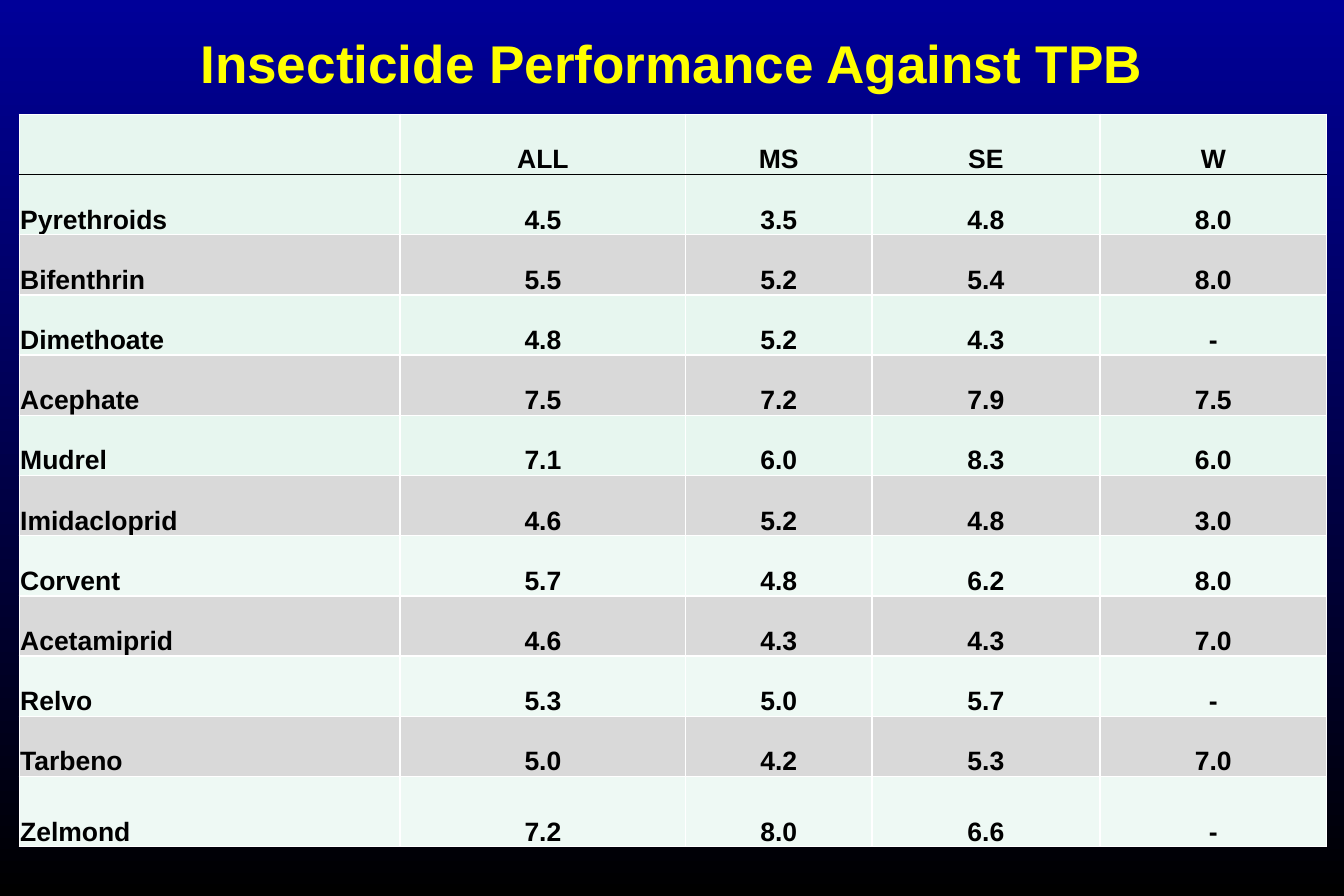
"""Build a slide with a table of insecticide performance ratings."""
from lxml.etree import SubElement
from pptx import Presentation
from pptx.dml.color import RGBColor
from pptx.enum.text import MSO_ANCHOR as Anchor, MSO_AUTO_SIZE as AutoSize, PP_ALIGN as Align
from pptx.oxml.ns import qn
from pptx.util import Cm, Pt

COLOURS = {
    "sky": "000099",
    "black": "000000",
    "title": "FFFF00",
    "grid": "FFFFFF",
    "grey": "D9D9D9",
    "mint": "E7F6EF",
    "pale": "EEF9F4",
}
FONT = "Arial"
COLUMN_WIDTHS = [8.1, 6.07, 3.96, 4.85, 4.82]
ROW_HEIGHT, LAST_ROW_HEIGHT = 1.28, 1.49
FIRST_PALE_ROW = 7
RATINGS = [
    ["", "ALL", "MS", "SE", "W"],
    ["Pyrethroids", "4.5", "3.5", "4.8", "8.0"],
    ["Bifenthrin", "5.5", "5.2", "5.4", "8.0"],
    ["Dimethoate", "4.8", "5.2", "4.3", "-"],
    ["Acephate", "7.5", "7.2", "7.9", "7.5"],
    ["Mudrel", "7.1", "6.0", "8.3", "6.0"],
    ["Imidacloprid", "4.6", "5.2", "4.8", "3.0"],
    ["Corvent", "5.7", "4.8", "6.2", "8.0"],
    ["Acetamiprid", "4.6", "4.3", "4.3", "7.0"],
    ["Relvo", "5.3", "5.0", "5.7", "-"],
    ["Tarbeno", "5.0", "4.2", "5.3", "7.0"],
    ["Zelmond", "7.2", "8.0", "6.6", "-"],
]


def colour(name):
    return RGBColor.from_string(COLOURS[name])


def add_text(frame, text, size, colour_name, align):
    para = frame.paragraphs[0]
    para.alignment = align
    if text:
        span = para.add_run()
        span.text = text
        span.font.name = FONT
        span.font.size = Pt(size)
        span.font.bold = True
        span.font.color.rgb = colour(colour_name)


def paint_background(page):
    fill = page.background.fill
    fill.gradient()
    fill.gradient_angle = 270
    for stop, name in zip(fill.gradient_stops, ["sky", "black"]):
        stop.color.rgb = colour(name)


def add_title(page, text):
    box = page.shapes.title
    box.left, box.top, box.width, box.height = Cm(0), Cm(0.51), Cm(28.58), Cm(1.63)
    frame = box.text_frame
    frame.word_wrap = True
    frame.auto_size = AutoSize.SHAPE_TO_FIT_TEXT
    frame.vertical_anchor = Anchor.TOP
    add_text(frame, text, 32, "title", Align.CENTER)


def set_borders(cell, top, bottom):
    properties = cell._tc.get_or_add_tcPr()
    sides = {"a:lnL": "grid", "a:lnR": "grid", "a:lnT": top, "a:lnB": bottom}
    for tag, name in sides.items():
        line = SubElement(properties, qn(tag), w=str(Pt(1)))
        fill = SubElement(line, qn("a:solidFill"))
        SubElement(fill, qn("a:srgbClr"), val=COLOURS[name])


def row_colour(row):
    if row and row % 2 == 0:
        return "grey"
    return "pale" if row >= FIRST_PALE_ROW else "mint"


def fill_cell(cell, row, column):
    cell.margin_left = cell.margin_right = cell.margin_top = Cm(0.02)
    cell.margin_bottom = Cm(0)
    cell.vertical_anchor = Anchor.BOTTOM
    set_borders(cell, "black" if row == 1 else "grid", "black" if row == 0 else "grid")
    cell.fill.solid()
    cell.fill.fore_color.rgb = colour(row_colour(row))
    align = Align.CENTER if column else Align.LEFT
    add_text(cell.text_frame, RATINGS[row][column], 16, "black", align)


def add_ratings_table(page):
    heights = [ROW_HEIGHT] * (len(RATINGS) - 1) + [LAST_ROW_HEIGHT]
    table = page.shapes.add_table(
        len(RATINGS), len(COLUMN_WIDTHS),
        Cm(0.41), Cm(2.43), Cm(sum(COLUMN_WIDTHS)), Cm(sum(heights)),
    ).table
    table.horz_banding = False
    table.first_row = False
    for column, width in zip(table.columns, COLUMN_WIDTHS):
        column.width = Cm(width)
    for row, height in enumerate(heights):
        table.rows[row].height = Cm(height)
        for column in range(len(COLUMN_WIDTHS)):
            fill_cell(table.cell(row, column), row, column)


def main():
    deck = Presentation()
    deck.slide_width, deck.slide_height = Cm(28.58), Cm(19.05)
    page = deck.slides.add_slide(deck.slide_layouts[5])
    paint_background(page)
    add_title(page, "Insecticide Performance Against TPB")
    add_ratings_table(page)
    deck.save("out.pptx")


if __name__ == "__main__":
    main()
